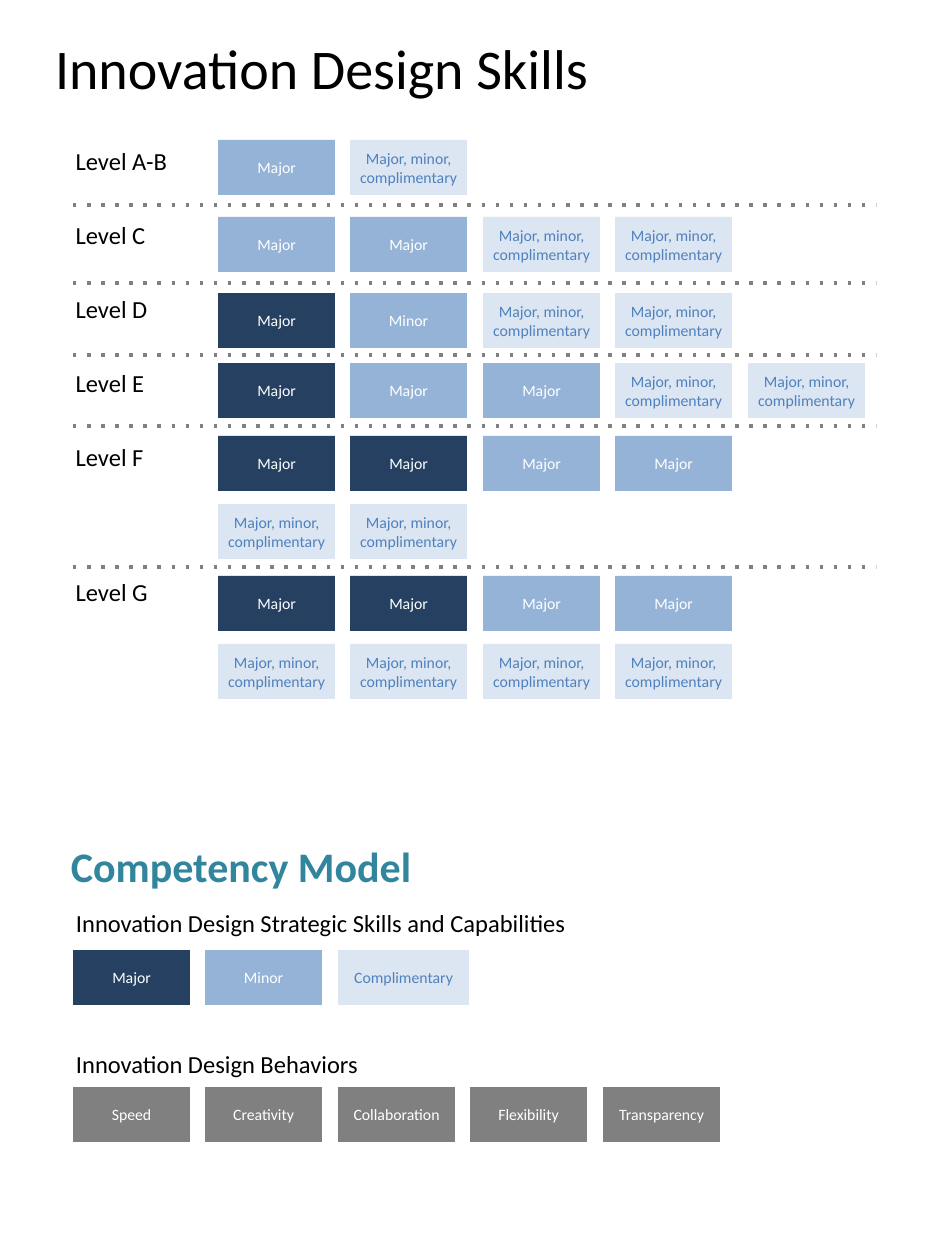
from dataclasses import dataclass

from lxml import etree
from pptx import Presentation
from pptx.dml.color import RGBColor
from pptx.enum.shapes import MSO_CONNECTOR, MSO_SHAPE
from pptx.enum.text import MSO_ANCHOR, MSO_AUTO_SIZE, PP_ALIGN
from pptx.oxml.ns import qn
from pptx.util import Emu, Pt

STRAIGHT = MSO_CONNECTOR.STRAIGHT
RECTANGLE = MSO_SHAPE.RECTANGLE
TOP, MIDDLE = MSO_ANCHOR.TOP, MSO_ANCHOR.MIDDLE
LEFT, CENTER = PP_ALIGN.LEFT, PP_ALIGN.CENTER
GROW = MSO_AUTO_SIZE.SHAPE_TO_FIT_TEXT

PX_PER_INCH = 126
TITLE_ONLY = 5
BOX_WIDTH, BOX_HEIGHT = 117, 55


@dataclass(frozen=True)
class Theme:
    font: str = "Calibri"
    ink: str = "000000"
    white: str = "FFFFFF"
    navy: str = "254061"
    blue: str = "95B3D7"
    pale: str = "DCE6F2"
    accent: str = "4F81BD"
    gray: str = "808080"
    teal: str = "31859C"
    title_size: int = 32
    heading_size: int = 24
    label_size: int = 14
    box_size: int = 9
    rule_width: int = 2


def px(value):
    return Emu(round(value * 914400 / PX_PER_INCH))


def column(left, index):
    return left + index * 265 // 2


def assign(target, values):
    for name, value in values.items():
        setattr(target, name, value)


class SkillSlide:
    def __init__(self, deck, theme):
        self.theme = theme
        self.page = deck.slides.add_slide(deck.slide_layouts[TITLE_ONLY])

    def add_span(self, frame, text, size, color, bold=False, align=LEFT):
        para = frame.paragraphs[0]
        para.alignment = align
        span = para.add_run()
        span.text = text
        assign(span.font, {"name": self.theme.font, "size": Pt(size), "bold": bold})
        span.font.color.rgb = RGBColor.from_string(color)

    def label(self, box, text, place, size, color, bold=False):
        left, top, width, height = map(px, place)
        assign(box, {"left": left, "top": top, "width": width, "height": height})
        frame = box.text_frame
        assign(frame, {
            "word_wrap": True, "auto_size": GROW, "vertical_anchor": TOP,
            "margin_left": px(13), "margin_right": px(13),
            "margin_top": px(6), "margin_bottom": px(6),
        })
        self.add_span(frame, text, size, color, bold)

    def title(self, text, place):
        self.label(self.page.shapes.title, text, place,
                   self.theme.title_size, self.theme.ink)

    def text(self, text, place, size, color, bold=False):
        box = self.page.shapes.add_textbox(*map(px, place))
        self.label(box, text, place, size, color, bold)

    def box(self, text, left, top, fill, width=BOX_WIDTH):
        pale = fill == self.theme.pale
        box = self.page.shapes.add_shape(
            RECTANGLE, px(left), px(top), px(width), px(BOX_HEIGHT))
        box.shadow.inherit = False
        box.fill.solid()
        box.fill.fore_color.rgb = RGBColor.from_string(fill)
        box.line.fill.background()
        margin = px(0 if pale else 13)
        assign(box.text_frame, {
            "word_wrap": True, "vertical_anchor": MIDDLE,
            "margin_left": margin, "margin_right": margin,
        })
        color = self.theme.accent if pale else self.theme.white
        self.add_span(box.text_frame, text, self.theme.box_size, color, align=CENTER)

    def levels(self, names, heights, left, top, width):
        frame = self.page.shapes.add_table(
            len(names), 1, px(left), px(top), px(width), px(sum(heights)))
        table = frame.table
        assign(table, {"first_row": False, "horz_banding": False})
        for row, name, height in zip(table.rows, names, heights):
            row.height = px(height)
            cell = row.cells[0]
            cell.fill.background()
            self.add_span(cell.text_frame, name, self.theme.label_size, self.theme.ink)

    def dotted_rule(self, left, right, y):
        rule = self.page.shapes.add_connector(
            STRAIGHT, px(left), px(y), px(right), px(y))
        rule.line.width = Pt(self.theme.rule_width)
        rule.line.color.rgb = RGBColor.from_string(self.theme.gray)
        properties = rule._element.spPr
        etree.SubElement(properties.find(qn("a:ln")), qn("a:prstDash"), val="dot")
        etree.SubElement(properties, qn("a:effectLst"))


def main():
    theme = Theme()
    deck = Presentation()
    assign(deck, {"slide_width": px(945), "slide_height": px(1260)})
    slide = SkillSlide(deck, theme)

    slide.title("Innovation Design Skills", (42, 28, 1160, 81))
    slide.levels(
        [f"Level {name}" for name in ("A-B", "C", "D", "E", "F", "G")],
        (74, 74, 74, 74, 135, 74), left=63, top=141, width=121)

    core = ("Major", theme.navy)
    major = ("Major", theme.blue)
    minor = ("Minor", theme.blue)
    mixed = ("Major, minor, complimentary", theme.pale)
    skill_rows = (
        (140, [major, mixed]),
        (217, [major, major, mixed, mixed]),
        (293, [core, minor, mixed, mixed]),
        (363, [core, major, major, mixed, mixed]),
        (436, [core, core, major, major]),
        (504, [mixed, mixed]),
        (576, [core, core, major, major]),
        (644, [mixed] * 4),
    )
    for top, skills in skill_rows:
        for index, (text, fill) in enumerate(skills):
            slide.box(text, column(218, index), top, fill)

    for y in (205, 283, 355, 426, 567):
        slide.dotted_rule(73, 876, y)

    slide.text("Competency Model", (58, 835, 543, 63),
               theme.heading_size, theme.teal, bold=True)
    for text, top in (("Innovation Design Strategic Skills and Capabilities", 902),
                      ("Innovation Design Behaviors", 1043)):
        slide.text(text, (63, top, 1160, 43), theme.label_size, theme.ink)

    legend = (core + (BOX_WIDTH,), minor + (BOX_WIDTH,),
              ("Complimentary", theme.pale, 131))
    for index, (text, fill, width) in enumerate(legend):
        slide.box(text, column(73, index), 950, fill, width)

    behaviors = ("Speed", "Creativity", "Collaboration", "Flexibility", "Transparency")
    for index, text in enumerate(behaviors):
        slide.box(text, column(73, index), 1087, theme.gray)

    deck.save("out.pptx")


if __name__ == "__main__":
    main()
